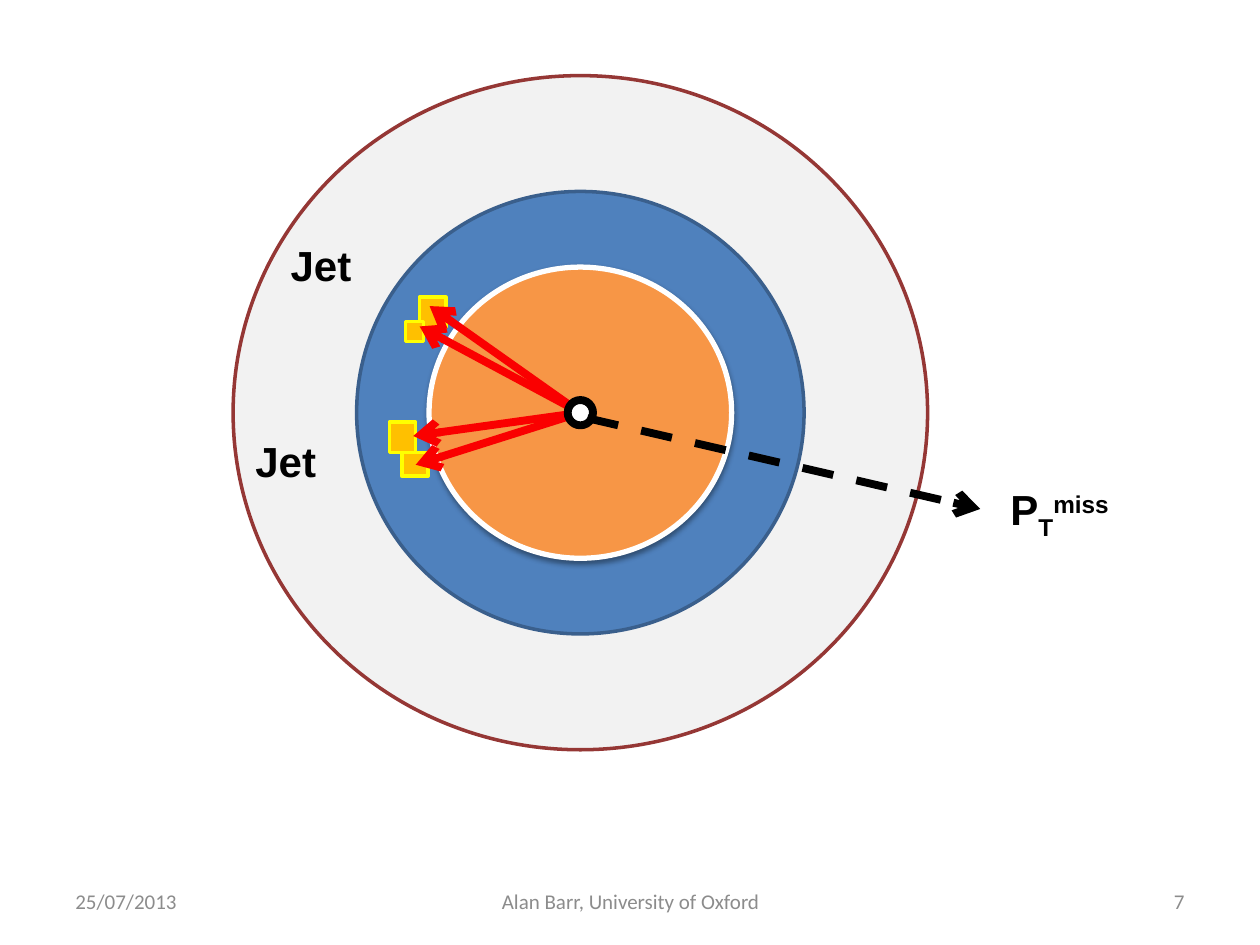
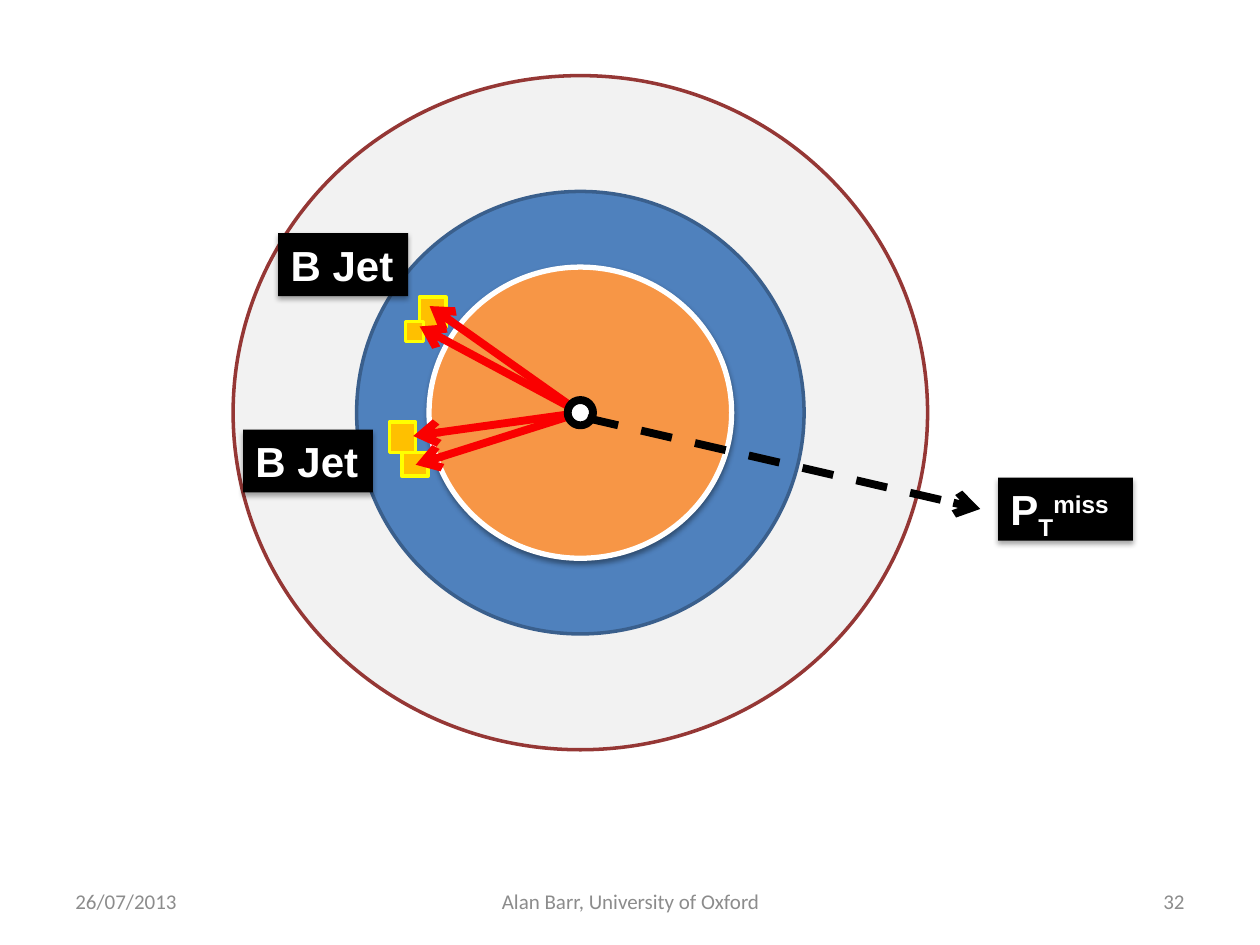
from dataclasses import dataclass

import lxml.etree
import pptx
import pptx.dml.color
import pptx.enum.dml
import pptx.enum.shapes
import pptx.enum.text
import pptx.oxml.ns
import pptx.util
from pptx.util import Cm

RECTANGLE = pptx.enum.shapes.MSO_SHAPE.RECTANGLE
OVAL = pptx.enum.shapes.MSO_SHAPE.OVAL
ALIGN = pptx.enum.text.PP_ALIGN
ANCHOR = pptx.enum.text.MSO_ANCHOR

BLACK, WHITE = "000000", "FFFFFF"
FOOTER_GREY = "8C8C8C"
CELL_FILL, CELL_LINE = "FFC000", "FFFF00"
TRACK_RED = "FA0000"

# Collision point shared by the rings and tracks, in centimetres
CENTRE = (11.7, 8.32)


@dataclass(frozen=True)
class Ring:
    width: float
    height: float
    fill: str
    line: str
    line_width: float
    shadow_alpha: int = 0


@dataclass(frozen=True)
class Box:
    left: float
    top: float
    width: float
    height: float


@dataclass(frozen=True)
class Hit:
    cell: Box
    track_end: tuple[float, float]


@dataclass(frozen=True)
class Label:
    box: Box
    runs: tuple[tuple[str, int], ...]  # text and baseline shift in percent


@dataclass(frozen=True)
class EventSlide:
    date: str
    number: str
    jet_name: str
    jet_width: float
    boxed: bool


DETECTOR_RINGS = (
    Ring(14, 13.59, "F2F2F2", "953735", 2),
    Ring(9.02, 8.92, "4F81BD", "3A5F8C", 2),
    Ring(6.1, 5.87, "F79646", WHITE, 3, shadow_alpha=38),
)
VERTEX = Ring(0.51, 0.51, WHITE, BLACK, 4.5)

# Each pair has one hit from each jet; its cells lie under its tracks
HIT_PAIRS = (
    (Hit(Box(8.46, 5.99, 0.53, 0.61), (8.66, 6.17)),
     Hit(Box(7.85, 8.51, 0.53, 0.61), (8.33, 8.79))),
    (Hit(Box(8.1, 9.12, 0.53, 0.48), (8.38, 9.37)),
     Hit(Box(8.18, 6.48, 0.36, 0.41), (8.46, 6.58))),
)
MISSING_START, MISSING_END = (11.84, 8.43), (19.76, 10.26)
JET_CORNERS = ((5.61, 4.7), (4.9, 8.66))
LABEL_HEIGHT = 1.27
MISSING_LABEL = Label(Box(20.12, 9.63, 2.72, LABEL_HEIGHT),
                      (("P", 0), ("T", -25), ("miss", 30)))

EVENT_SLIDES = (
    EventSlide("25/07/2013", "7", "Jet", 1.75, boxed=False),
    EventSlide("26/07/2013", "32", "B Jet", 2.62, boxed=True),
)


def rgb(value: str) -> pptx.dml.color.RGBColor:
    return pptx.dml.color.RGBColor.from_string(value)


def add_xml(parent, tag: str, **attributes):
    """Append a DrawingML child with the given attributes."""
    return lxml.etree.SubElement(parent, pptx.oxml.ns.qn(tag), attributes)


def place(box: Box) -> tuple:
    return Cm(box.left), Cm(box.top), Cm(box.width), Cm(box.height)


def add_shadow(shape, alpha: int, distance: float) -> None:
    effects = shape._element.spPr.find(pptx.oxml.ns.qn("a:effectLst"))
    shadow = add_xml(effects, "a:outerShdw",
                     blurRad=str(pptx.util.Pt(3.1)), dist=str(pptx.util.Pt(distance)),
                     dir="5400000", rotWithShape="0")
    color = add_xml(shadow, "a:srgbClr", val=BLACK)
    add_xml(color, "a:alpha", val=str(alpha * 1000))


def add_filled(slide, kind, box: Box, fill: str, line: str = "", line_width: float = 0):
    shape = slide.shapes.add_shape(kind, *place(box))
    shape.shadow.inherit = False
    shape.fill.solid()
    shape.fill.fore_color.rgb = rgb(fill)
    if line:
        shape.line.color.rgb = rgb(line)
        shape.line.width = pptx.util.Pt(line_width)
    else:
        shape.line.fill.background()
    return shape


def add_ring(slide, ring: Ring) -> None:
    box = Box(CENTRE[0] - ring.width / 2, CENTRE[1] - ring.height / 2,
              ring.width, ring.height)
    shape = add_filled(slide, OVAL, box, ring.fill, ring.line, ring.line_width)
    if ring.shadow_alpha:
        add_shadow(shape, ring.shadow_alpha, 1.6)


def add_arrow(slide, start: tuple[float, float], end: tuple[float, float],
              color: str, dashed: bool = False) -> None:
    connector = slide.shapes.add_connector(
        pptx.enum.shapes.MSO_CONNECTOR.STRAIGHT, *map(Cm, start + end))
    connector.line.color.rgb = rgb(color)
    connector.line.width = pptx.util.Pt(4.5)
    if dashed:
        connector.line.dash_style = pptx.enum.dml.MSO_LINE.DASH
    add_xml(connector.line._get_or_add_ln(), "a:tailEnd", type="arrow")
    add_xml(connector._element.spPr, "a:effectLst")


def set_font(paragraph, name: str, size: int, color: str, bold: bool = False) -> None:
    paragraph.font.name = name
    paragraph.font.size = pptx.util.Pt(size)
    paragraph.font.bold = bold
    paragraph.font.color.rgb = rgb(color)


def add_label(slide, label: Label, boxed: bool) -> None:
    if boxed:
        shape = add_filled(slide, RECTANGLE, label.box, BLACK)
        add_shadow(shape, 35, 1.8)
    else:
        shape = slide.shapes.add_textbox(*place(label.box))
    frame = shape.text_frame
    frame.word_wrap = False
    frame.auto_size = pptx.enum.text.MSO_AUTO_SIZE.SHAPE_TO_FIT_TEXT
    frame.vertical_anchor = ANCHOR.TOP
    paragraph = frame.paragraphs[0]
    paragraph.alignment = ALIGN.LEFT
    set_font(paragraph, "Arial", 24, WHITE if boxed else BLACK, bold=True)
    for text, baseline in label.runs:
        run = paragraph.add_run()
        run.text = text
        if baseline:
            run._r.get_or_add_rPr().set("baseline", str(baseline * 1000))


def add_footer(slide, date: str, number: str) -> None:
    for left, width, alignment, text in (
        (1.27, 5.92, ALIGN.LEFT, date),
        (8.69, 8.05, ALIGN.CENTER, "Alan Barr, University of Oxford"),
        (18.21, 5.92, ALIGN.RIGHT, number),
    ):
        frame = slide.shapes.add_textbox(*place(Box(left, 17.65, width, 1.02))).text_frame
        frame.word_wrap = True
        frame.vertical_anchor = ANCHOR.MIDDLE
        paragraph = frame.paragraphs[0]
        paragraph.text = text
        paragraph.alignment = alignment
        set_font(paragraph, "Calibri", 12, FOOTER_GREY)


def add_event_slide(presentation, event: EventSlide) -> None:
    slide = presentation.slides.add_slide(presentation.slide_layouts[6])

    # Detector layers
    for ring in DETECTOR_RINGS:
        add_ring(slide, ring)

    # Calorimeter cells and the tracks that reach them
    for pair in HIT_PAIRS:
        for hit in pair:
            add_filled(slide, RECTANGLE, hit.cell, CELL_FILL, CELL_LINE, 2)
        for hit in pair:
            add_arrow(slide, CENTRE, hit.track_end, TRACK_RED)

    # Collision point and missing momentum
    add_ring(slide, VERTEX)
    add_arrow(slide, MISSING_START, MISSING_END, BLACK, dashed=True)

    # Labels
    for left, top in JET_CORNERS:
        box = Box(left, top, event.jet_width, LABEL_HEIGHT)
        add_label(slide, Label(box, ((event.jet_name, 0),)), event.boxed)
    add_label(slide, MISSING_LABEL, event.boxed)

    add_footer(slide, event.date, event.number)


def main() -> None:
    presentation = pptx.Presentation()
    presentation.slide_width, presentation.slide_height = Cm(25.4), Cm(19.05)
    for event in EVENT_SLIDES:
        add_event_slide(presentation, event)
    presentation.save("out.pptx")


if __name__ == "__main__":
    main()
